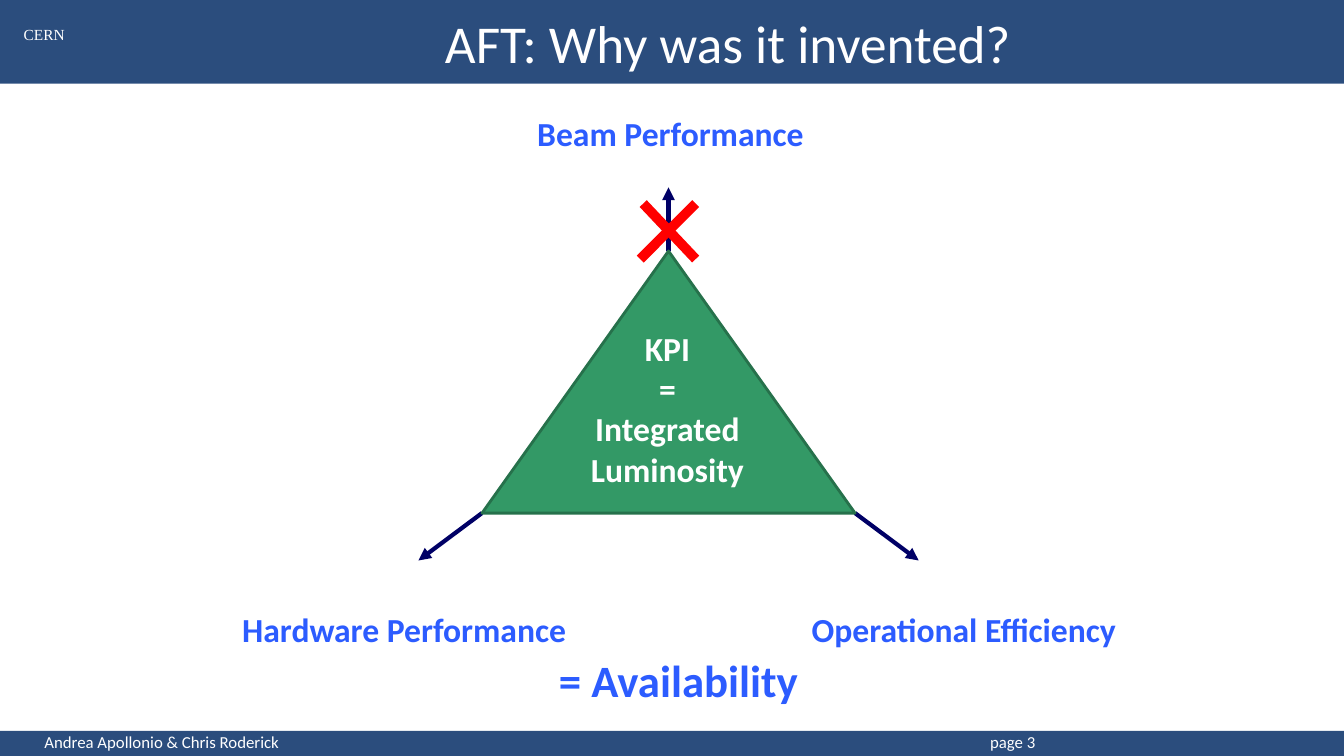
from lxml import etree
from pptx import Presentation
from pptx import util as u
from pptx.dml.color import RGBColor
from pptx.enum import shapes, text
from pptx.oxml.ns import qn

WIDTH, HEIGHT = u.Inches(13.33), u.Inches(7.5)
COLORS = {"band": "062F67", "white": "FFFFFF", "label": "2C5CFF",
          "triangle": "339966", "edge": "26714B", "arrow": "000066",
          "cross": "FF0000"}
HEADER_H, FOOTER_TOP = 11.07, 96.67
LABEL_W, LABEL_H = 48.16, 6.67


def rgb(name):
    return RGBColor.from_string(COLORS[name])


def x(share):
    """Percent of the slide width."""
    return round(WIDTH * share / 100)


def y(share):
    """Percent of the slide height."""
    return round(HEIGHT * share / 100)


def box(left, top, width, height):
    return x(left), y(top), x(width), y(height)


def add_filled(slide, kind, area, fill, edge=None):
    sp = slide.shapes.add_shape(kind, *box(*area))
    sp.shadow.inherit = False
    sp.fill.solid()
    sp.fill.fore_color.rgb = rgb(fill)
    if edge:
        sp.line.color.rgb = rgb(edge)
        sp.line.width = u.Pt(2)
    else:
        sp.line.fill.background()
    return sp


def add_band(slide, top, height):
    """Full-width band at 85 % opacity."""
    sp = add_filled(slide, shapes.MSO_SHAPE.RECTANGLE, (0, top, 100, height), "band")
    color = sp.fill._xPr.find(qn("a:solidFill"))[0]
    etree.SubElement(color, qn("a:alpha"), val="85000")


def add_text(slide, lines, area, size, color="white", bold=False, font="Calibri",
             align=text.PP_ALIGN.CENTER, anchor=text.MSO_ANCHOR.TOP, wrap=True):
    sp = slide.shapes.add_textbox(*box(*area))
    tf = sp.text_frame
    tf.word_wrap = wrap
    tf.vertical_anchor = anchor
    tf.text = "\n".join(lines)
    for p in tf.paragraphs:
        p.alignment = align
        p.font.size = u.Pt(size)
        p.font.name = font
        p.font.bold = bold
        p.font.color.rgb = rgb(color)
    return sp


def add_label(slide, words, left, top, size=24):
    add_text(slide, [words], (left, top, LABEL_W, LABEL_H), size, "label", bold=True)


def add_footer(slide, authors, page):
    """Authors at the left and the page number at a tab stop."""
    sp = add_text(slide, [""], (0, FOOTER_TOP, 98.35, 3.47), 12,
                  align=text.PP_ALIGN.LEFT, anchor=text.MSO_ANCHOR.BOTTOM)
    tf = sp.text_frame
    tf.margin_left = u.Inches(0.44)
    p = tf.paragraphs[0]
    p.add_run().text = f"{authors}\t{page}"
    pPr = p._p.get_or_add_pPr()
    tabs = etree.Element(qn("a:tabLst"))
    etree.SubElement(tabs, qn("a:tab"), pos=str(u.Inches(9.38)), algn="l")
    pPr.insert(0, tabs)


def add_line(slide, start, end, color, width, arrow=False):
    sp = slide.shapes.add_connector(shapes.MSO_CONNECTOR.STRAIGHT,
                                    x(start[0]), y(start[1]), x(end[0]), y(end[1]))
    sp.line.color.rgb = rgb(color)
    sp.line.width = u.Pt(width)
    if arrow:
        etree.SubElement(sp.line._get_or_add_ln(), qn("a:tailEnd"), type="triangle")
    etree.SubElement(sp._element.spPr, qn("a:effectLst"))


def add_triangle(slide, left, top, width, height):
    """KPI triangle with an arrow pointing out of each corner."""
    right, bottom = left + width, top + height
    apex = left + width / 2
    arrows = [((apex, top), (0, -8.4)),
              ((right, bottom), (4.73, 6.27)),
              ((left, bottom), (-4.73, 6.27))]
    for (cx, cy), (dx, dy) in arrows:
        add_line(slide, (cx, cy), (cx + dx, cy + dy), "arrow", 3, arrow=True)
    add_filled(slide, shapes.MSO_SHAPE.ISOSCELES_TRIANGLE,
               (left, top, width, height), "triangle", "edge")


def main():
    prs = Presentation()
    prs.slide_width, prs.slide_height = WIDTH, HEIGHT
    slide = prs.slides.add_slide(prs.slide_layouts[6])

    add_band(slide, 0, HEADER_H)
    add_band(slide, FOOTER_TOP, 100 - FOOTER_TOP)
    add_text(slide, ["CERN"], (0, 2.67, 6.6, 3.87), 11, font="Times New Roman")
    add_footer(slide, "Andrea Apollonio & Chris Roderick", "page 3")
    add_text(slide, ["AFT: Why was it invented?"], (8.33, 0, 91.67, HEADER_H), 38,
             anchor=text.MSO_ANCHOR.MIDDLE)

    add_triangle(slide, 35.86, 33.2, 27.76, 34.67)
    add_text(slide, ["KPI", "=", "Integrated", "Luminosity"],
             (43.14, 42.67, 13.05, 28.27), 24, bold=True, wrap=False)

    add_label(slide, "Beam Performance", 25.81, 14.27)
    add_label(slide, "Hardware Performance", 6, 79.87)
    add_label(slide, "Operational Efficiency", 47.64, 79.87)
    add_label(slide, "= Availability", 26.41, 85.73, size=32)

    add_line(slide, (51.76, 26.93), (47.64, 34.27), "cross", 7)
    add_line(slide, (51.76, 34.27), (47.86, 26.93), "cross", 7)

    prs.save("out.pptx")


if __name__ == "__main__":
    main()
